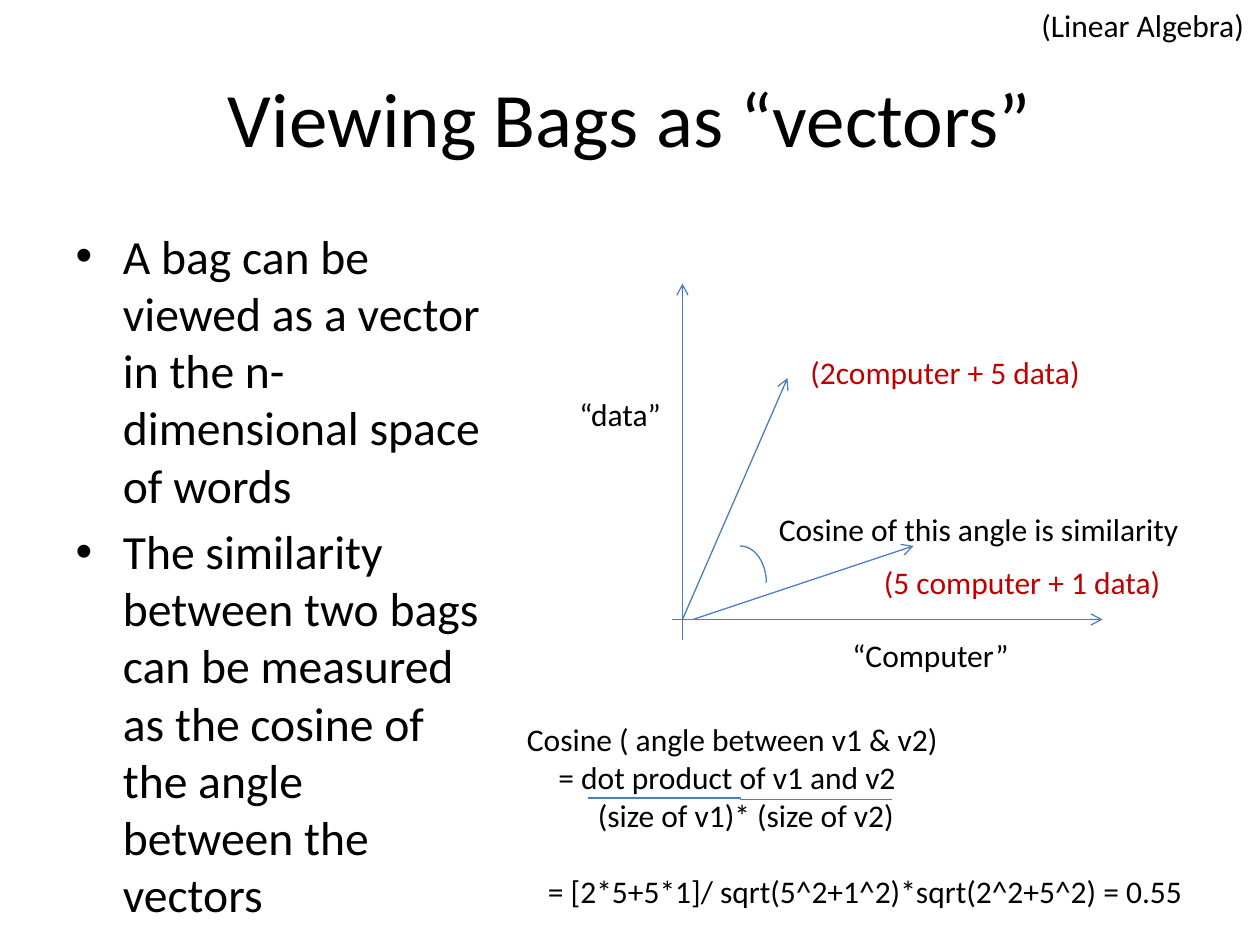
"""Build a slide that explains bags of words as vectors and their cosine similarity."""
from lxml.etree import SubElement
from pptx import Presentation
from pptx.dml.color import RGBColor
from pptx.enum.shapes import MSO_CONNECTOR, MSO_SHAPE
from pptx.enum.text import MSO_ANCHOR, MSO_AUTO_SIZE, PP_ALIGN
from pptx.oxml.ns import qn
from pptx.util import Pt

PX = 9525
FONT = "Calibri"
COLORS = {"text": "000000", "vector": "C00000", "line": "4B7EBC"}

prs = Presentation()
prs.slide_width, prs.slide_height = 960 * PX, 720 * PX
slide = prs.slides.add_slide(prs.slide_layouts[1])
shapes = slide.shapes


def write(paragraph, text, size, color="text"):
    run = paragraph.add_run()
    run.text = text
    run.font.name = FONT
    run.font.size = Pt(size)
    run.font.color.rgb = RGBColor.from_string(COLORS[color])


def draw_line(start, end, kind=MSO_CONNECTOR.STRAIGHT, arrow=True):
    line = shapes.add_connector(kind, *(value * PX for value in start + end))
    line.line.color.rgb = RGBColor.from_string(COLORS["line"])
    line.line.width = Pt(0.75)
    if arrow:
        SubElement(line.line._get_or_add_ln(), qn("a:tailEnd"), type="arrow")
    SubElement(line._element.spPr, qn("a:effectLst"))


title = shapes.title
title.left, title.top, title.width, title.height = (v * PX for v in (48, 29, 864, 120))
title.text_frame.vertical_anchor = MSO_ANCHOR.MIDDLE
heading = title.text_frame.paragraphs[0]
heading.alignment = PP_ALIGN.CENTER
write(heading, "Viewing Bags as “vectors”", 44)

points = slide.placeholders[1]
points.left, points.top, points.width, points.height = (v * PX for v in (48, 168, 328, 475))
points.text_frame.auto_size = MSO_AUTO_SIZE.NONE
for index, point in enumerate([
    "A bag can be viewed as a vector in the n-dimensional space of words",
    "The similarity between two bags can be measured as the cosine of the angle "
    "between the vectors",
]):
    frame = points.text_frame
    write(frame.add_paragraph() if index else frame.paragraphs[0], point, 27.2)

for start, end in [
    ((512, 472), (840, 472)),
    ((520, 488), (520, 216)),
    ((520, 472), (600, 288)),
    ((528, 472), (696, 416)),
]:
    draw_line(start, end)

angle = shapes.add_shape(MSO_SHAPE.ARC, 544 * PX, 416 * PX, 40 * PX, 56 * PX)
angle.shadow.inherit = False
angle.fill.background()
angle.line.color.rgb = RGBColor.from_string(COLORS["line"])
angle.line.width = Pt(0.75)

formula = [
    ("Cosine ( angle between v1 & v2)", 0, 0),
    ("= dot product of v1 and v2", 24, 0),
    ("(size of v1)* (size of v2)", 54, 0),
    ("= [2*5+5*1]/ sqrt(5^2+1^2)*sqrt(2^2+5^2) = 0.55", 16, 22),
]
for box, color, lines in [
    ((584, 384, 327, 38), "text", [("Cosine of this angle is similarity", 0, 0)]),
    ((640, 480, 140, 38), "text", [("“Computer”", 0, 0)]),
    ((432, 296, 82, 38), "text", [("“data”", 0, 0)]),
    ((608, 264, 228, 38), "vector", [("(2computer + 5 data)", 0, 0)]),
    ((664, 424, 233, 38), "vector", [("(5 computer + 1 data)", 0, 0)]),
    ((392, 544, 525, 156), "text", formula),
    ((784, 0, 176, 38), "text", [("(Linear Algebra)", 0, 0)]),
]:
    label = shapes.add_textbox(*(value * PX for value in box)).text_frame
    label.word_wrap = False
    label.auto_size = MSO_AUTO_SIZE.SHAPE_TO_FIT_TEXT
    for index, (text, indent, gap) in enumerate(lines):
        paragraph = label.add_paragraph() if index else label.paragraphs[0]
        if indent:
            paragraph._p.get_or_add_pPr().set("marL", str(indent * PX))
        if gap:
            paragraph.space_before = Pt(gap)
        write(paragraph, text, 18, color)

draw_line((448, 608), (680, 609), MSO_CONNECTOR.ELBOW, arrow=False)

prs.save("out.pptx")
